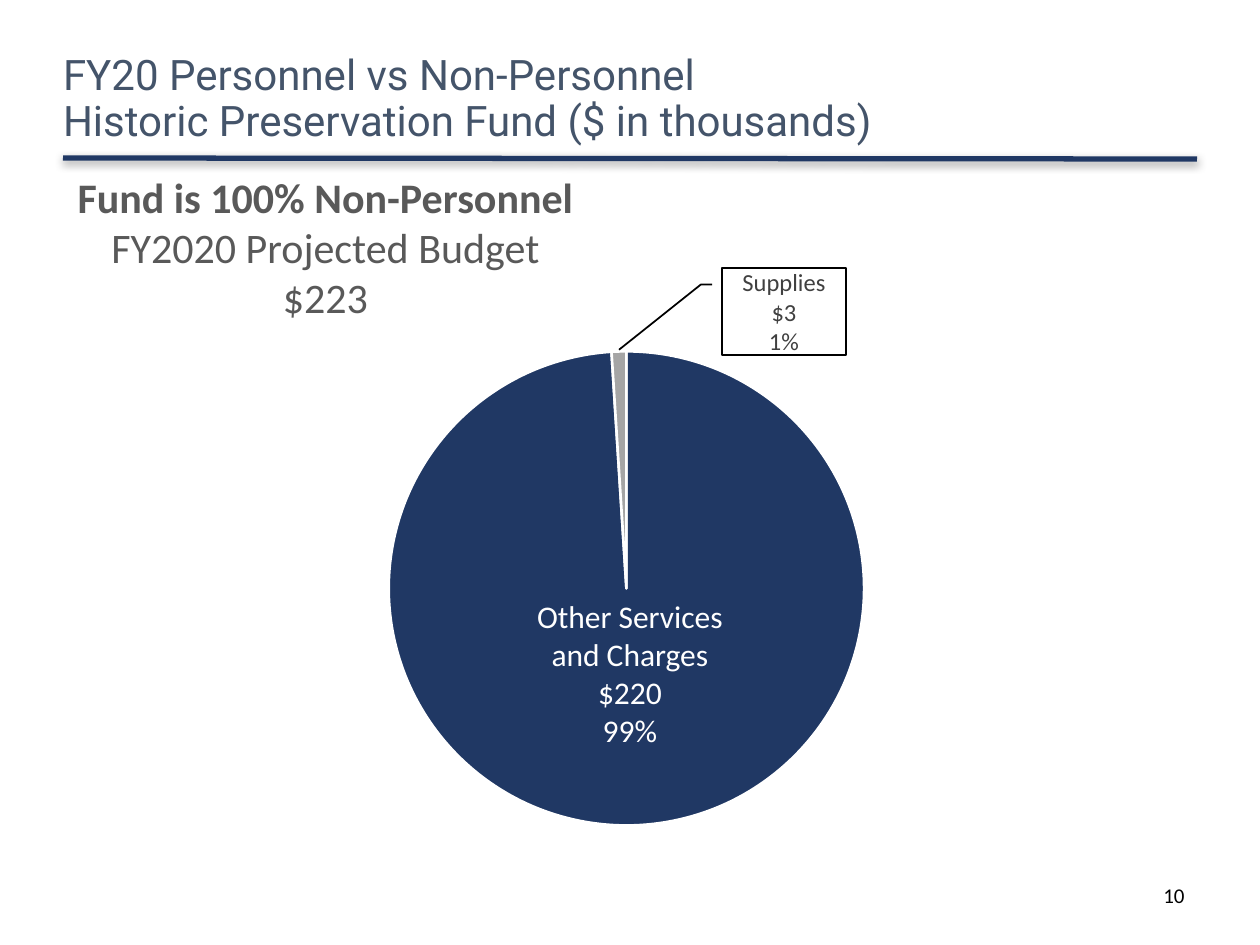
from lxml import etree
from pptx import Presentation
from pptx.chart.data import CategoryChartData
from pptx.dml.color import RGBColor
from pptx.enum.chart import XL_CHART_TYPE
from pptx.enum.shapes import MSO_CONNECTOR, MSO_SHAPE
from pptx.enum.text import MSO_ANCHOR, PP_ALIGN
from pptx.oxml import parse_xml
from pptx.oxml.ns import nsdecls, qn
from pptx.util import Pt

PIE = XL_CHART_TYPE.PIE
STRAIGHT = MSO_CONNECTOR.STRAIGHT
CALLOUT = MSO_SHAPE.LINE_CALLOUT_2
TOP, MIDDLE = MSO_ANCHOR.TOP, MSO_ANCHOR.MIDDLE
LEFT, CENTER, RIGHT = PP_ALIGN.LEFT, PP_ALIGN.CENTER, PP_ALIGN.RIGHT

PX_PER_INCH = 126
COLORS = {
    "navy": "203864", "title": "44546A", "heading": "595959", "label": "404040",
    "gray": "A5A5A5", "sky": "9DC3E6", "black": "000000", "white": "FFFFFF",
}


def px(n):
    return round(n * 914400 / PX_PER_INCH)


def rgb(name):
    return RGBColor.from_string(COLORS[name])


def write(tf, lines, size, color, align=CENTER, font="Calibri", anchor=TOP, wrap=True):
    tf.word_wrap = wrap
    tf.vertical_anchor = anchor
    for i, line in enumerate(lines):
        p = tf.paragraphs[0] if i == 0 else tf.add_paragraph()
        p.text = line
        p.alignment = align
        p.font.name = font
        p.font.size = Pt(size)
        p.font.color.rgb = rgb(color)


def add_text(s, box, lines, size, color, **options):
    tf = s.shapes.add_textbox(*map(px, box)).text_frame
    write(tf, lines, size, color, **options)
    return tf


def add_header(s, x, y, w, h):
    """Title with a shadowed rule along the bottom of the box."""
    rule = s.shapes.add_connector(STRAIGHT, px(x), px(y + h), px(x + w), px(y + h + 1))
    rule.line.color.rgb = rgb("navy")
    rule.line.width = Pt(3)
    rule._element.spPr.append(parse_xml(
        f'<a:effectLst {nsdecls("a")}>'
        '<a:outerShdw blurRad="63500" dist="20320" dir="5400000" rotWithShape="0">'
        f'<a:srgbClr val="{COLORS["black"]}"><a:alpha val="38000"/></a:srgbClr>'
        '</a:outerShdw></a:effectLst>'))

    title = "FY20 Personnel vs Non-Personnel\vHistoric Preservation Fund ($ in thousands)"
    tf = add_text(s, (x, y, 976, h), [title], 24, "title",
                  align=LEFT, font="Roboto", anchor=MIDDLE)
    tf.margin_left = tf.margin_right = tf.margin_top = tf.margin_bottom = 0
    tf.paragraphs[0].line_spacing = 0.9


def add_summary(s, x, y, w, h):
    lines = ["Fund is 100% Non-Personnel", "FY2020 Projected Budget", "$223"]
    tf = add_text(s, (x, y, w, h), lines, 24, "heading", wrap=False)
    tf.paragraphs[0].font.bold = True


def set_plot_layout(chart, **fractions):
    """Fix the inner plot area as fractions of the chart."""
    plot_area = chart._chartSpace.chart.plotArea
    for old in plot_area.findall(qn("c:layout")):
        plot_area.remove(old)
    layout = etree.Element(qn("c:layout"))
    manual = etree.SubElement(layout, qn("c:manualLayout"))
    settings = {"layoutTarget": "inner", "xMode": "edge", "yMode": "edge", **fractions}
    for tag, value in settings.items():
        etree.SubElement(manual, qn(f"c:{tag}")).set("val", str(value))
    plot_area.insert(0, layout)


def add_pie(s, x, y, w, h):
    data = CategoryChartData()
    data.categories = ["1", "2", "3"]
    data.add_series("Series 1", [None, 99, 1])
    chart = s.shapes.add_chart(PIE, px(x), px(y), px(w), px(h), data).chart
    chart.has_title = False
    chart.has_legend = False
    chart.font.name = "Calibri"
    chart.font.size = Pt(10)
    chart.font.color.rgb = rgb("black")
    set_plot_layout(chart, x=0.157, y=0, w=0.676, h=0.925)

    plot = chart.plots[0]
    plot.vary_by_categories = True
    for i, color in enumerate(["sky", "navy", "gray"]):
        fmt = plot.series[0].points[i].format
        fmt.fill.solid()
        fmt.fill.fore_color.rgb = rgb(color)
        fmt.line.color.rgb = rgb("white")
        fmt.line.width = Pt(1.5)

    add_text(s, (x + 233, y + 241, 238, 165),
             ["Other Services and Charges", "$220", "99%"], 18, "white")


def add_callout(s, x, y, w, h):
    sp = s.shapes.add_shape(CALLOUT, px(x), px(y), px(w), px(h))
    sp.shadow.inherit = False
    sp.fill.background()
    sp.line.color.rgb = rgb("black")
    sp.line.width = Pt(1)
    for i, value in enumerate([0.188, -0.083, 0.188, -0.167, 0.943, -0.834]):
        sp.adjustments[i] = round(value, 2)
    write(sp.text_frame, ["Supplies", "$3", "1%"], 14, "label", anchor=MIDDLE)


def main():
    prs = Presentation()
    prs.slide_width, prs.slide_height = px(1260), px(945)
    s = prs.slides.add_slide(prs.slide_layouts[6])
    add_header(s, 63, 42, 1134, 116)
    add_text(s, (903, 876, 294, 50), ["10"], 12, "black", align=RIGHT)
    add_pie(s, 278, 350, 704, 514)
    add_summary(s, 63, 165, 525, 165)
    add_callout(s, 722, 268, 124, 87)
    prs.save("out.pptx")


if __name__ == "__main__":
    main()
